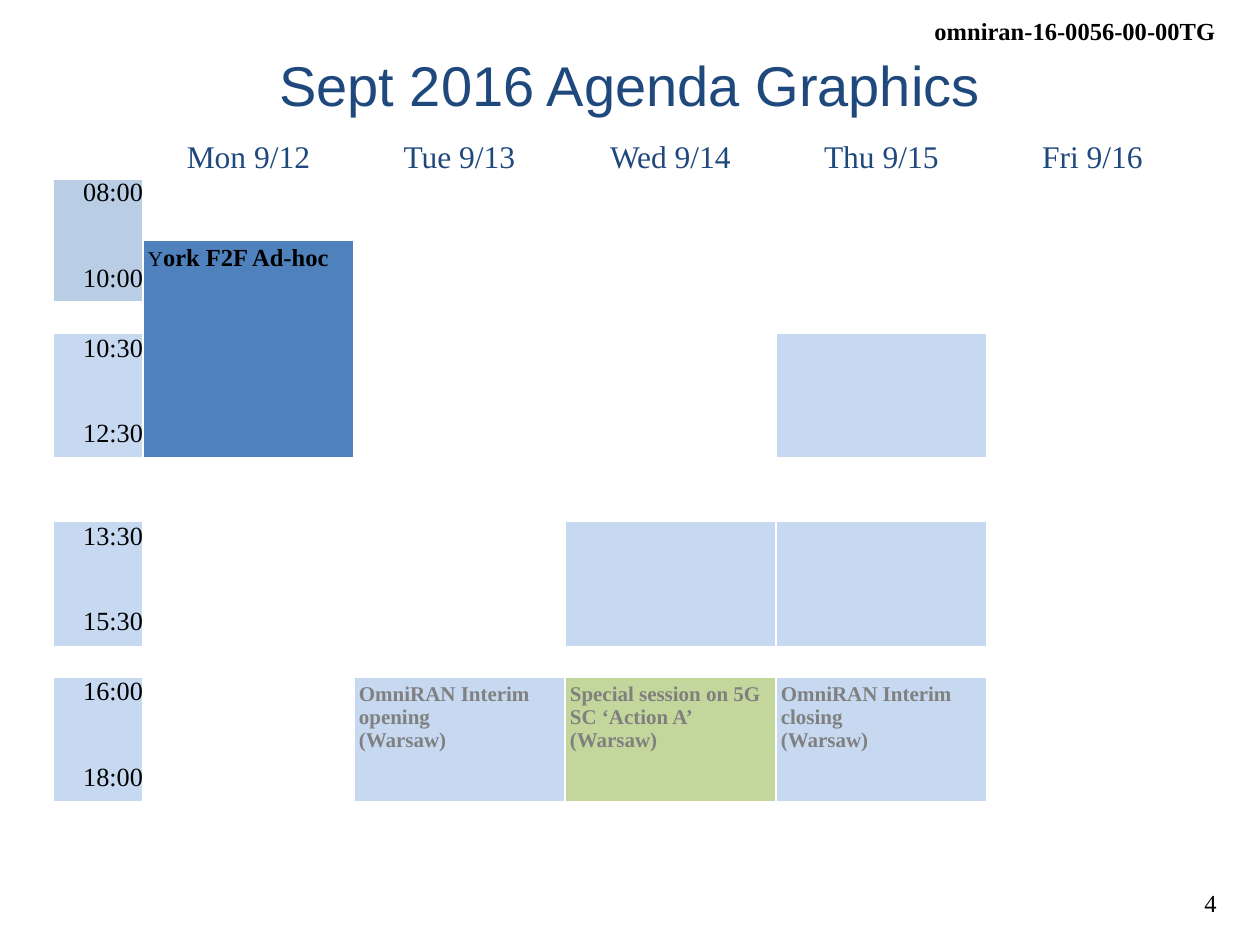
"""Build the weekly agenda slide with its session timetable."""
from lxml.etree import SubElement
from pptx import Presentation
from pptx.dml.color import RGBColor
from pptx.enum.text import MSO_ANCHOR, PP_ALIGN
from pptx.oxml.ns import qn
from pptx.util import Emu, Pt

COLORS = {"white": "FFFFFF", "black": "000000", "navy": "1F497D", "gray": "808080",
          "early": "B9CDE5", "pale": "C6D9F1", "blue": "4F81BD", "green": "C3D69B"}
DOCUMENT = "omniran-16-0056-00-00TG"
TITLE = "Sept 2016 Agenda Graphics"
PAGE = "4"
DAYS = ["Mon 9/12", "Tue 9/13", "Wed 9/14", "Thu 9/15", "Fri 9/16"]
SLOTS = {1: ("08:00", "10:00", "early"), 4: ("10:30", "12:30", "pale"),
         7: ("13:30", "15:30", "pale"), 10: ("16:00", "18:00", "pale")}
ADHOC = [("Y", 12, False), ("ork F2F Ad-hoc", 14, True)]
SESSIONS = {2: ("OmniRAN Interim opening", "pale"),
            3: ("Special session on 5G SC ‘Action A’", "green"),
            4: ("OmniRAN Interim closing", "pale")}
ROOM = "(Warsaw)"
BLOCKS = {(2, 1): "blue", (4, 4): "pale", (7, 3): "pale", (7, 4): "pale"}
ROW_SPANS = [{1: 2, 5: 2, 7: 2, 11: 2}, {2: 3, 5: 3, 11: 2}, {1: 2, 5: 2, 7: 2, 11: 2},
             {2: 3, 5: 2, 7: 2, 11: 2}, {1: 2, 5: 2, 7: 2, 11: 2}, {1: 4, 6: 5}]
ROW_HEIGHTS = [37, 62, 62, 32, 124, 32, 32, 31, 94, 31, 124, 39, 40]
COLUMN_WIDTHS = [90] + [211] * len(DAYS)


def px(length):
    return Emu(round(length * 914400 / 126))


def rgb(color):
    return RGBColor.from_string(COLORS[color])


def write(frame, paragraphs, size=14, color="black", bold=False,
          font="Times New Roman", align=PP_ALIGN.LEFT, gap=0):
    for index, runs in enumerate(paragraphs):
        paragraph = frame.paragraphs[0] if index == 0 else frame.add_paragraph()
        paragraph.alignment = align
        if index and gap:
            paragraph.space_before = Pt(gap)
        for words, points, heavy in [(runs, size, bold)] if isinstance(runs, str) else runs:
            run = paragraph.add_run()
            run.text = words
            run.font.name = font
            run.font.size = Pt(points)
            run.font.bold = heavy
            run.font.color.rgb = rgb(color)


def add_text(slide, box, words, wrap=False, **style):
    frame = slide.shapes.add_textbox(*map(px, box)).text_frame
    frame.word_wrap = wrap
    write(frame, [words], **style)
    return frame


def format_cell(cell, fill, bottom, inset):
    properties = cell._tc.get_or_add_tcPr()
    for side, points in (("L", 1), ("R", 1), ("T", 1), ("B", bottom)):
        line = SubElement(properties, qn(f"a:ln{side}"), w=str(Pt(points)))
        SubElement(SubElement(line, qn("a:solidFill")), qn("a:srgbClr"), val=COLORS["white"])
    cell.fill.solid()
    cell.fill.fore_color.rgb = rgb(fill)
    cell.margin_left = cell.margin_right = cell.margin_top = cell.margin_bottom = px(inset)


def add_timetable(slide):
    frame = slide.shapes.add_table(len(ROW_HEIGHTS), len(COLUMN_WIDTHS), px(53), px(140),
                                   px(sum(COLUMN_WIDTHS)), px(sum(ROW_HEIGHTS)))
    table = frame.table
    table.first_row = table.horz_banding = False
    for column, width in zip(table.columns, COLUMN_WIDTHS):
        column.width = px(width)
    for row, height in zip(table.rows, ROW_HEIGHTS):
        row.height = px(height)

    fills = dict(BLOCKS)
    fills.update({(row, 0): fill for row, (_, _, fill) in SLOTS.items()})
    fills.update({(10, column): fill for column, (_, fill) in SESSIONS.items()})
    inset_cells = {(2, 1)} | {(10, column) for column in SESSIONS}
    for row in range(len(ROW_HEIGHTS)):
        for column in range(len(COLUMN_WIDTHS)):
            cell = table.cell(row, column)
            format_cell(cell, fills.get((row, column), "white"), 1 if row else 3,
                        5 if (row, column) in inset_cells else 0)
            cell.text_frame.paragraphs[0]._p.get_or_add_endParaRPr().set("sz", "800")
    for column, spans in enumerate(ROW_SPANS):
        for row, span in spans.items():
            table.cell(row, column).merge(table.cell(row + span - 1, column))

    for column, day in enumerate(DAYS, 1):
        write(table.cell(0, column).text_frame, [day], size=18, color="navy",
              align=PP_ALIGN.CENTER)
    for row, (start, end, _) in SLOTS.items():
        write(table.cell(row, 0).text_frame, [start, end], size=15,
              align=PP_ALIGN.RIGHT, gap=32.5)
    write(table.cell(2, 1).text_frame, [ADHOC])
    for column, (session, _) in SESSIONS.items():
        write(table.cell(10, column).text_frame, [session, ROOM], size=12,
              color="gray", bold=True)


def main():
    presentation = Presentation()
    presentation.slide_width, presentation.slide_height = px(1260), px(945)
    slide = presentation.slides.add_slide(presentation.slide_layouts[6])
    add_text(slide, (920, 10, 308, 43), DOCUMENT, bold=True, align=PP_ALIGN.RIGHT)
    add_text(slide, (1175, 882, 54, 43), PAGE, align=PP_ALIGN.RIGHT)
    title = add_text(slide, (63, 38, 1134, 98), TITLE, wrap=True, size=32, color="navy",
                     font="Arial", align=PP_ALIGN.CENTER)
    title.vertical_anchor = MSO_ANCHOR.MIDDLE
    title.margin_bottom = px(12)
    add_timetable(slide)
    presentation.save("out.pptx")


if __name__ == "__main__":
    main()
